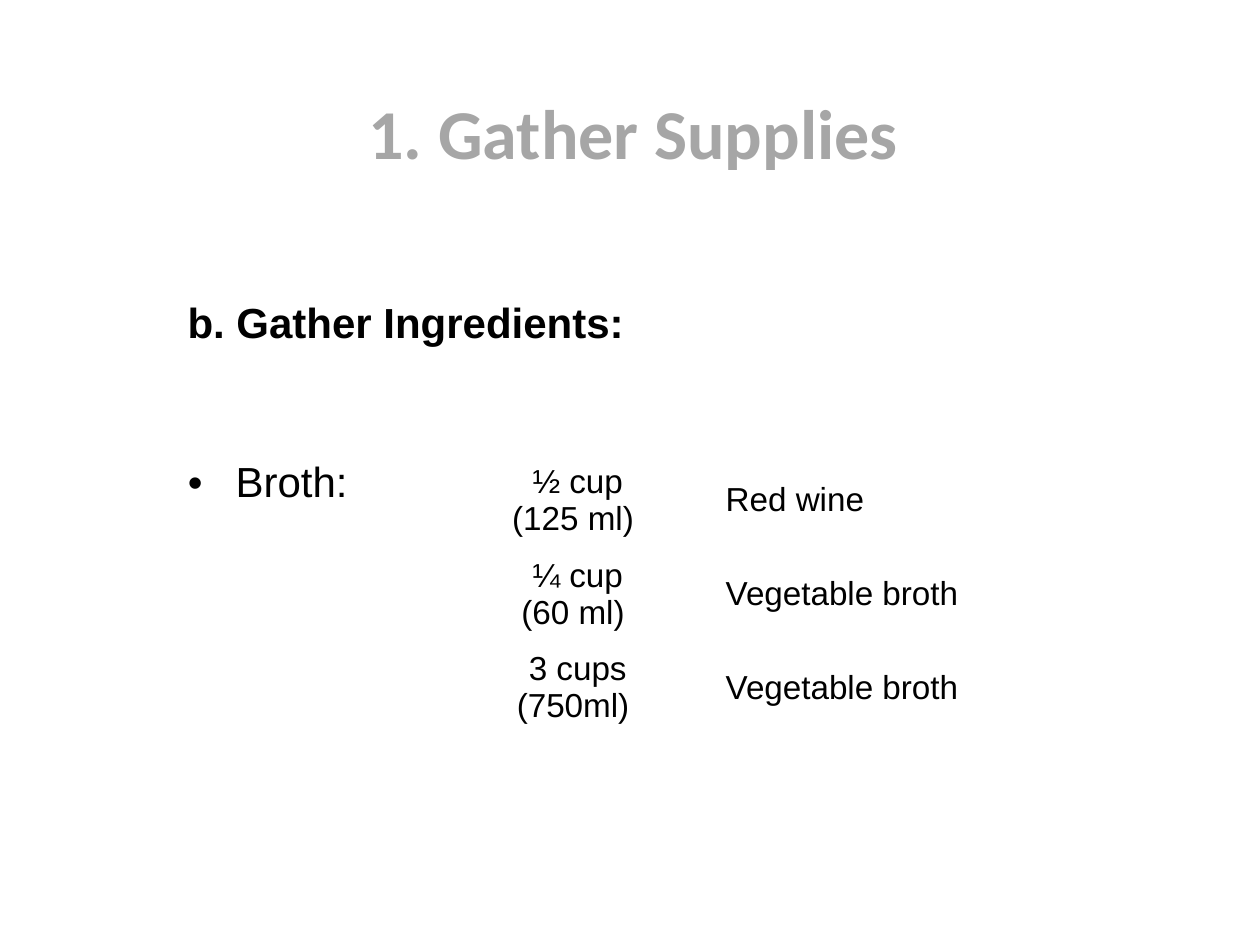
from pptx import Presentation
from pptx.dml.color import RGBColor as RGB
from pptx.enum.text import MSO_ANCHOR as Anchor, PP_ALIGN as Align
from pptx.oxml.ns import qn
from pptx.util import Inches, Pt
from lxml.etree import SubElement as Sub


def color(code):
    return RGB.from_string(code)


def write(para, text, size, name="Arial", code="000000", bold=False):
    para.text = text
    font = para.font
    font.name, font.size, font.bold = name, Pt(size), bold
    font.color.rgb = color(code)


def indent(para, left, hang=0, mark=None):
    props = para._p.get_or_add_pPr()
    props.set("marL", str(Inches(left)))
    props.set("indent", str(Inches(-hang)))
    if mark:
        Sub(props, qn("a:buFont")).set("typeface", "Arial")
        Sub(props, qn("a:buChar")).set("char", mark)


def add_text(slide, box):
    frame = slide.shapes.add_textbox(*map(Inches, box)).text_frame
    frame.word_wrap = True
    return frame.paragraphs[0]


def add_title(slide, box):
    para = add_text(slide, box)
    write(para, "1. Gather Supplies", 40, "Calibri", "A6A6A6", True)
    para.alignment = Align.CENTER


def add_heading(slide, box):
    para = add_text(slide, box)
    write(para, "b. Gather Ingredients:", 24, bold=True)
    para.space_before = Pt(5)


def add_items(slide, box, widths, items):
    frame = slide.shapes.add_table(len(items), len(widths), *map(Inches, box))
    table = frame.table
    table.first_row = table.horz_banding = False
    for col, width in zip(table.columns, widths):
        col.width = Inches(width)
    for cell in table.iter_cells():
        cell.fill.background()

    broth = table.cell(0, 0).text_frame.paragraphs[0]
    write(broth, "Broth:", 24)
    indent(broth, 0.38, 0.38, "•")

    for row, (amount, item) in enumerate(items):
        left, right = table.cell(row, 1), table.cell(row, 2)
        for cell, text in ((left, amount), (right, item)):
            cell.vertical_anchor = Anchor.MIDDLE
            write(cell.text_frame.paragraphs[0], text, 19)
        left.text_frame.paragraphs[0].alignment = Align.CENTER
        right.margin_left = 0
        right.margin_right = Inches(0.05)
        para = right.text_frame.paragraphs[0]
        para.level = 1
        indent(para, 0.5)


def main():
    deck = Presentation()
    deck.slide_width, deck.slide_height = Inches(10), Inches(7.5)
    slide = deck.slides.add_slide(deck.slide_layouts[6])
    add_heading(slide, (1.39, 2.3, 6.7, 0.75))
    add_title(slide, (0.94, 0.66, 8.17, 0.77))
    items = [
        ("½ cup (125 ml) ", "Red wine"),
        ("¼ cup (60 ml) ", "Vegetable broth"),
        ("3 cups (750ml) ", "Vegetable broth"),
    ]
    add_items(slide, (1.39, 3.6, 7.09, 2.23), (2.52, 1.35, 3.22), items)
    deck.save("out.pptx")


if __name__ == "__main__":
    main()
